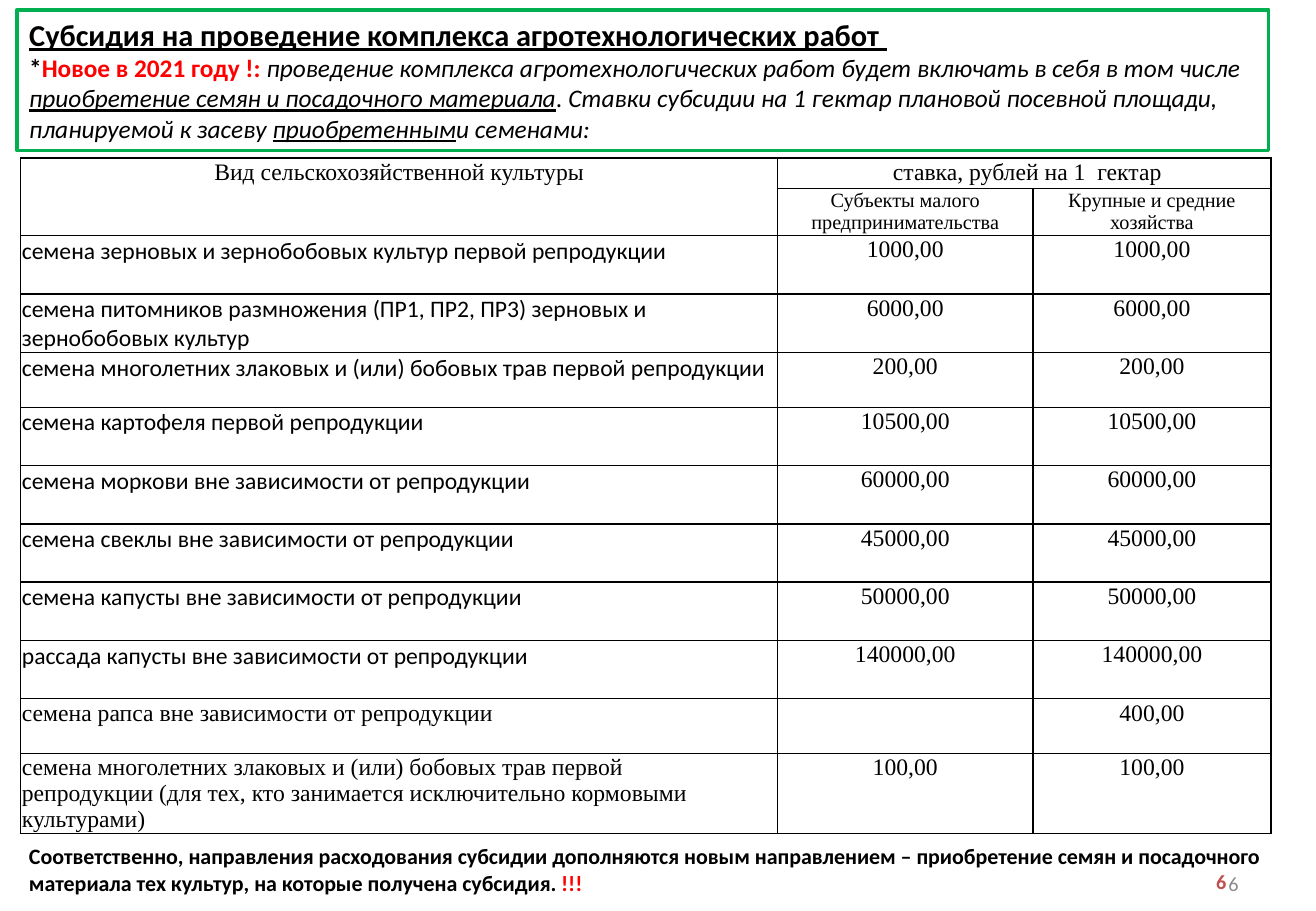
from dataclasses import dataclass

from lxml.etree import SubElement
from pptx import Presentation
from pptx.dml.color import RGBColor
from pptx.enum.text import MSO_ANCHOR as Anchor, MSO_AUTO_SIZE as AutoSize, PP_ALIGN as Align
from pptx.oxml.ns import qn
from pptx.util import Inches, Pt


@dataclass(frozen=True)
class Theme:
    sans: str = "Calibri"
    serif: str = "Times New Roman"
    ink: str = "000000"
    alert: str = "FF0000"
    frame: str = "00B050"
    accent: str = "C0504D"
    muted: str = "8C8C8C"
    heading: int = 18
    lead: int = 15
    cell: int = 14
    note: int = 13
    small: int = 12


THEME = Theme()
COLUMNS = (6.23, 2.1, 1.96)
HEADER_HEIGHTS = (0.25, 0.39)
# Crop, rate for small businesses, rate for large and medium farms, font, row height
CROPS = [
    ("семена зерновых и зернобобовых культур первой репродукции",
     "1000,00", "1000,00", THEME.sans, 0.48),
    ("семена питомников размножения (ПР1, ПР2, ПР3) зерновых и зернобобовых культур",
     "6000,00", "6000,00", THEME.sans, 0.48),
    ("семена многолетних злаковых и (или) бобовых трав первой репродукции",
     "200,00", "200,00", THEME.sans, 0.45),
    ("семена картофеля первой репродукции", "10500,00", "10500,00", THEME.sans, 0.48),
    ("семена моркови вне зависимости от репродукции",
     "60000,00", "60000,00", THEME.sans, 0.48),
    ("семена свеклы вне зависимости от репродукции",
     "45000,00", "45000,00", THEME.sans, 0.48),
    ("семена капусты вне зависимости от репродукции",
     "50000,00", "50000,00", THEME.sans, 0.48),
    ("рассада капусты вне зависимости от репродукции",
     "140000,00", "140000,00", THEME.sans, 0.48),
    ("семена рапса вне зависимости от репродукции", "", "400,00", THEME.serif, 0.45),
    ("семена многолетних злаковых и (или) бобовых трав первой\n"
     "репродукции (для тех, кто занимается исключительно кормовыми культурами)",
     "100,00", "100,00", THEME.serif, 0.66),
]


def style(span, size, name=THEME.sans, color=THEME.ink, bold=False, italic=False,
          underline=False):
    font = span.font
    font.name, font.size = name, Pt(size)
    font.bold, font.italic, font.underline = bold, italic, underline
    font.color.rgb = RGBColor.from_string(color)


def add_spans(para, size, spans):
    """Append (text, formatting) pairs to a paragraph."""
    for text, formatting in spans:
        span = para.add_run()
        span.text = text
        style(span, size, **formatting)


def add_text(page, box, size, spans, align=Align.LEFT):
    frame = page.shapes.add_textbox(*map(Inches, box)).text_frame
    frame.word_wrap = True
    frame.vertical_anchor = Anchor.MIDDLE
    para = frame.paragraphs[0]
    para.alignment = align
    add_spans(para, size, spans)


def add_heading(page, box):
    title = page.shapes.title
    title.left, title.top, title.width, title.height = map(Inches, box)
    title.line.color.rgb = RGBColor.from_string(THEME.frame)
    title.line.width = Pt(2.25)
    frame = title.text_frame
    frame.word_wrap = True
    frame.auto_size = AutoSize.NONE
    frame.vertical_anchor = Anchor.TOP
    heading, lead = frame.paragraphs[0], frame.add_paragraph()
    heading.alignment = lead.alignment = Align.LEFT
    add_spans(heading, THEME.heading, [
        ("Субсидия на проведение комплекса агротехнологических работ ",
         dict(bold=True, underline=True)),
    ])
    plain, marked = dict(italic=True), dict(italic=True, underline=True)
    add_spans(lead, THEME.lead, [
        ("*", dict(bold=True)),
        ("Новое в 2021 году !: ", dict(bold=True, color=THEME.alert)),
        ("проведение комплекса агротехнологических работ будет включать в себя "
         "в том числе ", plain),
        ("приобретение семян и посадочного материала", marked),
        (". Ставки субсидии на 1 гектар плановой посевной площади, "
         "планируемой к засеву ", plain),
        ("приобретенным", marked),
        ("и семенами:", plain),
    ])


def set_borders(cell):
    properties = cell._tc.get_or_add_tcPr()
    for side in ("lnL", "lnR", "lnT", "lnB"):
        line = SubElement(properties, qn(f"a:{side}"), w=str(Pt(1)))
        fill = SubElement(line, qn("a:solidFill"))
        SubElement(fill, qn("a:srgbClr"), val=THEME.ink)


def fill_cell(cell, text, size, name, align):
    cell.text_frame.text = text
    for para in cell.text_frame.paragraphs:
        para.alignment = align
        for span in para.runs:
            style(span, size, name)


def add_rates(page, left, top):
    heights = [*HEADER_HEIGHTS, *(crop[-1] for crop in CROPS)]
    table = page.shapes.add_table(
        len(heights), len(COLUMNS), Inches(left), Inches(top),
        Inches(sum(COLUMNS)), Inches(sum(heights))).table
    table.first_row = table.horz_banding = False
    for column, width in zip(table.columns, COLUMNS):
        column.width = Inches(width)
    for row, height in zip(table.rows, heights):
        row.height = Inches(height)
    for cell in table.iter_cells():
        cell.margin_left = cell.margin_right = cell.margin_top = Inches(0.01)
        cell.margin_bottom = 0
        set_borders(cell)
        cell.fill.background()

    table.cell(0, 0).merge(table.cell(1, 0))
    table.cell(0, 1).merge(table.cell(0, 2))
    for row, column, text, size in (
        (0, 0, "Вид сельскохозяйственной культуры", THEME.cell),
        (0, 1, " ставка, рублей на 1  гектар", THEME.cell),
        (1, 1, "Субъекты малого предпринимательства", THEME.small),
        (1, 2, "Крупные и средние хозяйства", THEME.small),
    ):
        fill_cell(table.cell(row, column), text, size, THEME.serif, Align.CENTER)
    for row, (crop, *rates, name, _) in enumerate(CROPS, len(HEADER_HEIGHTS)):
        fill_cell(table.cell(row, 0), crop, THEME.cell, name, Align.LEFT)
        for column, rate in enumerate(rates, 1):
            fill_cell(table.cell(row, column), rate, THEME.cell, THEME.serif, Align.CENTER)


def add_footer(page, box):
    """Place the closing note and the two page numbers at its lower right."""
    left, top, _, _ = box
    add_text(page, box, THEME.note, [
        ("Соответственно, направления расходования субсидии дополняются новым "
         "направлением – приобретение семян и посадочного материала тех культур, "
         "на которые получена субсидия. ", dict(bold=True)),
        ("!!!", dict(bold=True, color=THEME.alert)),
    ])
    add_text(page, (left + 9.61, top + 0.33, 0.44, 0.24), THEME.small,
             [("6", dict(bold=True, color=THEME.accent))], Align.RIGHT)
    add_text(page, (left + 9.87, top + 0.34, 0.44, 0.24), THEME.small,
             [("6", dict(color=THEME.muted))])


def main():
    deck = Presentation()
    deck.slide_width, deck.slide_height = Inches(10.83), Inches(7.5)
    page = deck.slides.add_slide(deck.slide_layouts.get_by_name("Title Only"))
    add_heading(page, (0.14, 0.08, 10.3, 1.16))
    add_rates(page, 0.17, 1.3)
    add_footer(page, (0.14, 6.81, 10.69, 0.69))
    deck.save("out.pptx")


if __name__ == "__main__":
    main()
